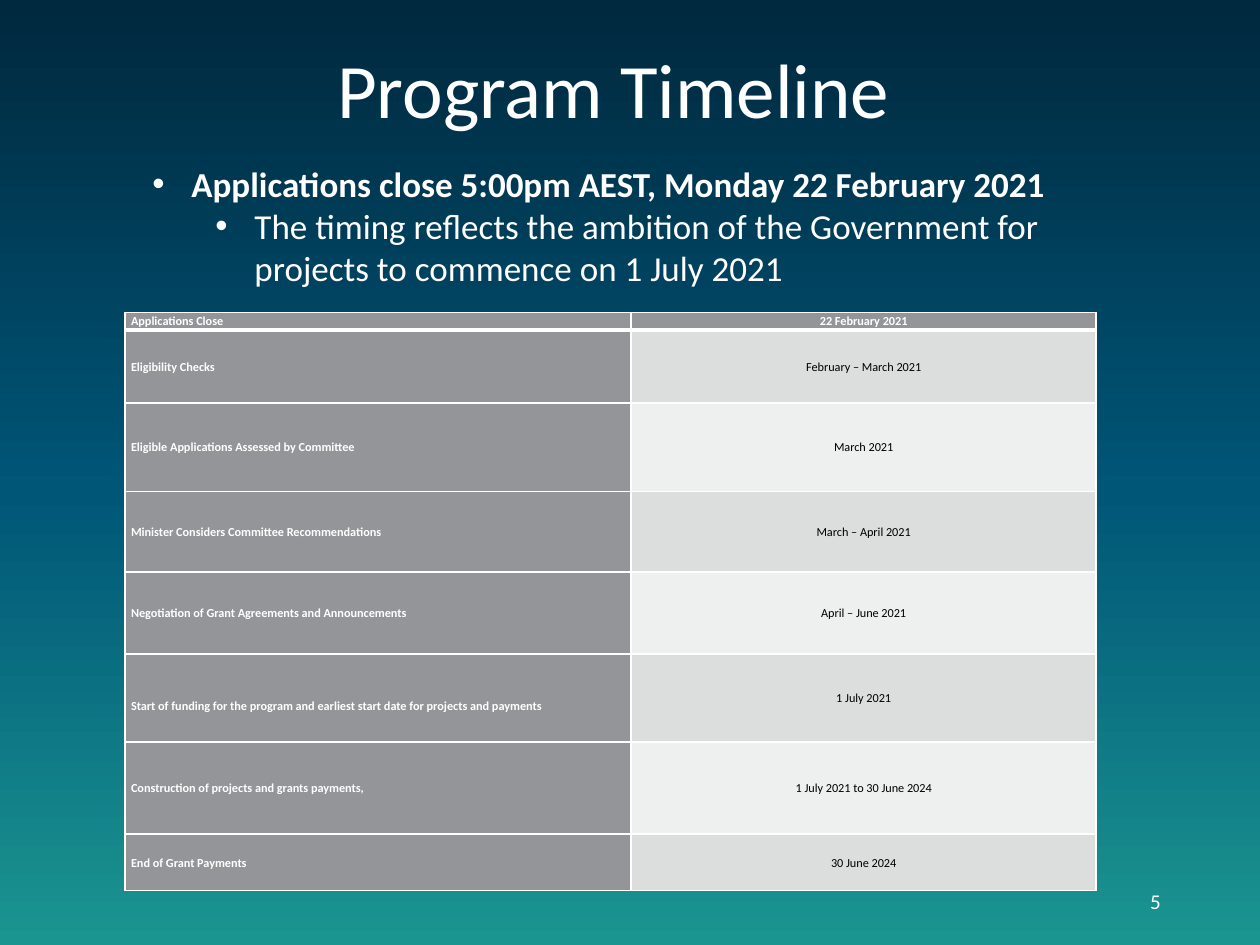
import copy
from dataclasses import dataclass

import pptx
import pptx.dml.color
import pptx.enum.text
import pptx.oxml.ns
import pptx.oxml.xmlchemy
import pptx.util
from lxml import etree

Inches = pptx.util.Inches
Pt = pptx.util.Pt
PP_ALIGN = pptx.enum.text.PP_ALIGN
MSO_ANCHOR = pptx.enum.text.MSO_ANCHOR
qn = pptx.oxml.ns.qn


@dataclass(frozen=True)
class Theme:
    font: str = "Calibri"
    light: str = "FFFFFF"
    dark: str = "000000"
    label: str = "939598"
    bands: tuple = ("DCDDDD", "EEEFEF")
    gradient: tuple = ((0, "00283E"), (0.52, "005677"), (1, "1B9590"))
    title_size: float = 44
    body_size: float = 20
    number_size: float = 12
    table_size: float = 7


def rgb(value):
    return pptx.dml.color.RGBColor.from_string(value)


class SlideBuilder:
    def __init__(self, prs, theme):
        self.theme = theme
        self.s = prs.slides.add_slide(prs.slide_layouts[1])

    def place(self, sp, box):
        sp.left, sp.top, sp.width, sp.height = map(Inches, box)

    def run(self, p, text, size, color, bold=False):
        r = p.add_run()
        r.text = text
        r.font.name = self.theme.font
        r.font.size = Pt(size)
        r.font.bold = bold
        r.font.color.rgb = rgb(color)

    def background(self):
        fill = self.s.background.fill
        fill.gradient()
        fill.gradient_angle = 270
        first = self.s.background._cSld.find(".//" + qn("a:gs"))
        first.addnext(copy.deepcopy(first))
        for stop, (position, color) in zip(fill.gradient_stops, self.theme.gradient):
            stop.position = position
            stop.color.rgb = rgb(color)

    def title(self, text, box):
        sp = self.s.shapes.title
        self.place(sp, box)
        tf = sp.text_frame
        tf.auto_size = pptx.enum.text.MSO_AUTO_SIZE.NONE
        tf.vertical_anchor = MSO_ANCHOR.BOTTOM
        p = tf.paragraphs[0]
        p.alignment = PP_ALIGN.CENTER
        p.line_spacing = 0.9
        self.run(p, text, self.theme.title_size, self.theme.light)

    def bullets(self, items, box):
        sp = self.s.placeholders[1]
        self.place(sp, box)
        tf = sp.text_frame
        tf.auto_size = pptx.enum.text.MSO_AUTO_SIZE.NONE
        for i, (level, text) in enumerate(items):
            p = tf.add_paragraph() if i else tf.paragraphs[0]
            p.level = level
            p.space_before = Pt(0)
            pPr = p._p.get_or_add_pPr()
            pPr.set("marL", str(Inches(0.31 + 0.5 * level)))
            pPr.set("indent", str(-Inches(0.31)))
            etree.SubElement(pPr, qn("a:buFont"), typeface="Arial")
            etree.SubElement(pPr, qn("a:buChar"), char="•")
            self.run(p, text, self.theme.body_size, self.theme.light, level == 0)

    def text(self, text, box, align):
        sp = self.s.shapes.add_textbox(*map(Inches, box))
        tf = sp.text_frame
        tf.word_wrap = True
        tf.vertical_anchor = MSO_ANCHOR.MIDDLE
        p = tf.paragraphs[0]
        p.alignment = align
        self.run(p, text, self.theme.number_size, self.theme.light)

    def borders(self, cell, widths):
        tcPr = cell._tc.get_or_add_tcPr()
        for side, width in widths.items():
            ln = etree.SubElement(tcPr, qn("a:ln" + side), w=str(Pt(width)))
            fill = etree.SubElement(ln, qn("a:solidFill"))
            etree.SubElement(fill, qn("a:srgbClr"), val=self.theme.light)

    def cell(self, cell, text, fill, color, bold, align, widths):
        self.borders(cell, widths)
        cell.fill.solid()
        cell.fill.fore_color.rgb = rgb(fill)
        cell.vertical_anchor = MSO_ANCHOR.MIDDLE
        cell.margin_left = cell.margin_right = Inches(0.05)
        cell.margin_top = cell.margin_bottom = 0
        p = cell.text_frame.paragraphs[0]
        p.alignment = align
        p.line_spacing = 1.07
        self.run(p, text, self.theme.table_size, color, bold)

    def table(self, rows, heights, widths, left, top):
        t = self.theme
        frame = self.s.shapes.add_table(
            len(rows), len(widths), Inches(left), Inches(top),
            Inches(sum(widths)), Inches(sum(heights)))
        table = frame.table
        for column, width in zip(table.columns, widths):
            column.width = Inches(width)
        for row, height in zip(table.rows, heights):
            row.height = Inches(height)
        for i, (stage, date) in enumerate(rows):
            header = i == 0
            lines = {"L": 1, "R": 1, "T": 3 if i == 1 else 1, "B": 3 if header else 1}
            fill = t.label if header else t.bands[(i - 1) % 2]
            color = t.light if header else t.dark
            self.cell(table.cell(i, 0), stage, t.label, t.light, True,
                      PP_ALIGN.LEFT, lines)
            self.cell(table.cell(i, 1), date, fill, color, header,
                      PP_ALIGN.CENTER, lines)
        return table


def main():
    prs = pptx.Presentation()
    prs.slide_width, prs.slide_height = Inches(10), Inches(7.5)
    slide = SlideBuilder(prs, Theme())
    slide.background()
    slide.title("Program Timeline", (0.69, 0.4, 8.36, 0.72))
    rows = [
        ("Applications Close", "22 February 2021"),
        ("Eligibility Checks", "February – March 2021"),
        ("Eligible Applications Assessed by Committee", "March 2021"),
        ("Minister Considers Committee Recommendations", "March – April 2021"),
        ("Negotiation of Grant Agreements and Announcements", "April – June 2021"),
        ("Start of funding for the program and earliest start date for projects and payments",
         "1 July 2021"),
        ("Construction of projects and grants payments,", "1 July 2021 to 30 June 2024"),
        ("End of Grant Payments", "30 June 2024"),
    ]
    heights = [0.14, 0.58, 0.7, 0.64, 0.65, 0.7, 0.73, 0.45]
    table = slide.table(rows, heights, [4.02, 3.69], 0.99, 2.48)
    table.cell(5, 0).margin_top = Inches(0.13)
    slide.text("5", (7.06, 6.95, 2.25, 0.4), PP_ALIGN.RIGHT)
    slide.bullets([
        (0, "Applications close 5:00pm AEST, Monday 22 February 2021"),
        (1, "The timing reflects the ambition of the Government for projects "
            "to commence on 1 July 2021"),
    ], (1.11, 1.24, 7.67, 1.11))
    prs.save("out.pptx")


if __name__ == "__main__":
    main()
